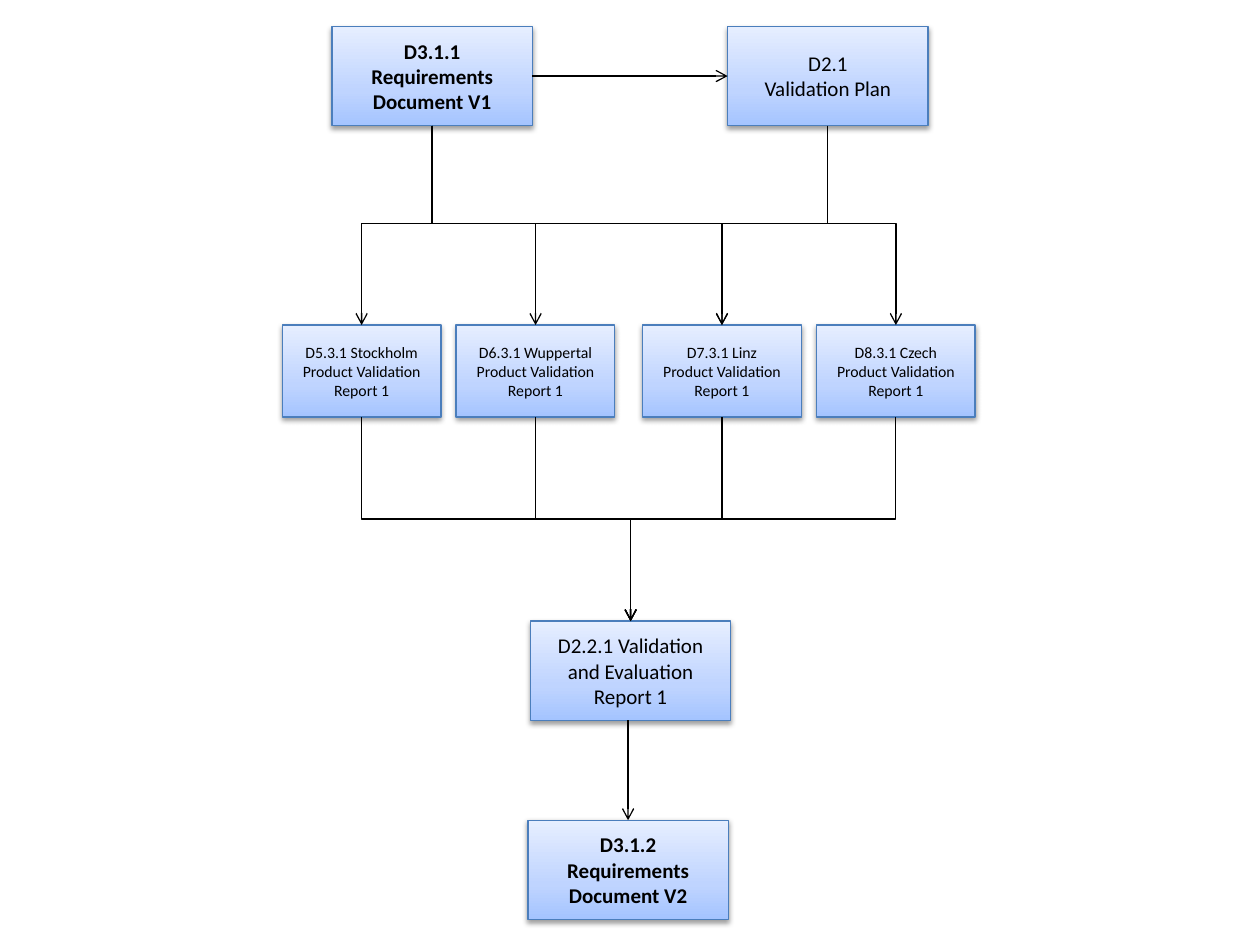
from copy import deepcopy
from dataclasses import dataclass

from lxml.etree import SubElement
from pptx import Presentation
from pptx.dml.color import RGBColor
from pptx.enum.shapes import MSO_CONNECTOR as Connector, MSO_SHAPE as Shape
from pptx.enum.text import MSO_ANCHOR as Anchor, PP_ALIGN as Align
from pptx.oxml.ns import qn
from pptx.util import Inches, Pt


@dataclass(frozen=True)
class Theme:
    font: str = "Calibri"
    large: float = 12
    small: float = 9
    ink: str = "000000"
    border: str = "4B7EBC"
    gradient: tuple = ((0, "A4C4FF"), (0.35, "BFD4FF"), (1, "E6EEFF"))
    line_width: float = 0.75


theme = Theme()
presentation = Presentation()
presentation.slide_width, presentation.slide_height = Inches(10), Inches(7.5)
slide = presentation.slides.add_slide(presentation.slide_layouts[6])

# The grid has 100 columns and 100 rows; boxes are placed by centre column and top row.
COLUMN = presentation.slide_width / 100
ROW = presentation.slide_height / 100
LARGE_BOX, SMALL_BOX = (15.9, 10.5), (12.6, 9.73)
PLAN_ROW, REPORT_ROW, EVALUATION_ROW, RESULT_ROW = 2.8, 34.4, 65.73, 86.8
PLAN_BOTTOM = PLAN_ROW + LARGE_BOX[1]
REPORT_BOTTOM = REPORT_ROW + SMALL_BOX[1]
REQUIREMENTS, VALIDATION, EVALUATION, RESULT = 34.3, 65.7, 50.05, 49.85
REPORTS = (28.7, 42.5, 57.3, 71.1)


def add_box(text, center, top, size=LARGE_BOX, font_size=theme.large, bold=False):
    width, height = size
    shape = slide.shapes.add_shape(
        Shape.RECTANGLE, round((center - width / 2) * COLUMN), round(top * ROW),
        round(width * COLUMN), round(height * ROW))
    shape.fill.gradient()
    shape.fill.gradient_angle = 90
    stop_list = shape.fill.gradient_stops[0]._gs.getparent()
    stop_list.append(deepcopy(stop_list[-1]))
    for stop, (position, color) in zip(shape.fill.gradient_stops, theme.gradient):
        stop.position = position
        stop.color.rgb = RGBColor.from_string(color)
    shape.line.color.rgb = RGBColor.from_string(theme.border)
    shape.line.width = Pt(theme.line_width)

    shape.shadow.inherit = False
    effects = shape._element.spPr.find(qn("a:effectLst"))
    shadow = SubElement(effects, qn("a:outerShdw"), blurRad=str(Pt(3.1)),
                        dist=str(Pt(1.6)), dir="5400000", rotWithShape="0")
    shadow_color = SubElement(shadow, qn("a:srgbClr"), val=theme.ink)
    SubElement(shadow_color, qn("a:alpha"), val="38000")

    frame = shape.text_frame
    frame.word_wrap = True
    frame.vertical_anchor = Anchor.MIDDLE
    frame.text = text
    for paragraph in frame.paragraphs:
        paragraph.alignment = Align.CENTER
        paragraph.font.name = theme.font
        paragraph.font.size = Pt(font_size)
        paragraph.font.bold = bold
        paragraph.font.color.rgb = RGBColor.from_string(theme.ink)


def add_arrow(start, end, bend=0.5):
    """Join two grid points; an elbow leaves downwards and turns at the share bend."""
    (x1, y1), (x2, y2) = [(x * COLUMN, y * ROW) for x, y in (start, end)]
    elbow = x1 != x2 and y1 != y2
    kind, turn = Connector.STRAIGHT, 0
    if elbow:
        # An elbow runs sideways first, so it is laid flat and then turned upright.
        kind, turn = Connector.ELBOW, 90 if x2 < x1 else 270
        middle_x, middle_y = (x1 + x2) / 2, (y1 + y2) / 2
        reach = (y2 - y1) / 2 * (1 if turn == 90 else -1)
        spread = abs(x2 - x1) / 2
        x1, x2 = middle_x - reach, middle_x + reach
        y1, y2 = middle_y - spread, middle_y + spread
    connector = slide.shapes.add_connector(kind, *map(round, (x1, y1, x2, y2)))
    connector.line.color.rgb = RGBColor.from_string(theme.ink)
    connector.line.width = Pt(theme.line_width)
    properties = connector._element.spPr
    if elbow:
        properties.find(qn("a:xfrm")).set("rot", str(turn * 60000))
        adjustments = properties.find(qn("a:prstGeom")).find(qn("a:avLst"))
        SubElement(adjustments, qn("a:gd"), name="adj1", fmla=f"val {round(bend * 100000)}")
    SubElement(properties.find(qn("a:ln")), qn("a:tailEnd"), type="arrow")
    SubElement(properties, qn("a:effectLst"))


add_box("D3.1.1\nRequirements Document V1", REQUIREMENTS, PLAN_ROW, bold=True)
add_box("D2.1\nValidation Plan", VALIDATION, PLAN_ROW)
add_box("D2.2.1 Validation and Evaluation Report 1", EVALUATION, EVALUATION_ROW)
add_box("D3.1.2\nRequirements Document V2", RESULT, RESULT_ROW, bold=True)

sites = ("D5.3.1 Stockholm ", "D6.3.1 Wuppertal ", "D7.3.1 Linz\v", "D8.3.1 Czech ")
for site, center in zip(sites, REPORTS):
    add_box(f"{site}Product Validation Report 1", center, REPORT_ROW,
            size=SMALL_BOX, font_size=theme.small)
    add_arrow((REQUIREMENTS, PLAN_BOTTOM), (center, REPORT_ROW), bend=0.49)
    add_arrow((center, REPORT_BOTTOM), (EVALUATION, EVALUATION_ROW))

plan_middle = PLAN_ROW + LARGE_BOX[1] / 2
add_arrow((REQUIREMENTS + LARGE_BOX[0] / 2, plan_middle),
          (VALIDATION - LARGE_BOX[0] / 2, plan_middle))
add_arrow((VALIDATION, PLAN_BOTTOM), (REPORTS[2], REPORT_ROW), bend=0.49)
add_arrow((RESULT, EVALUATION_ROW + LARGE_BOX[1]), (RESULT, RESULT_ROW))

presentation.save("out.pptx")
